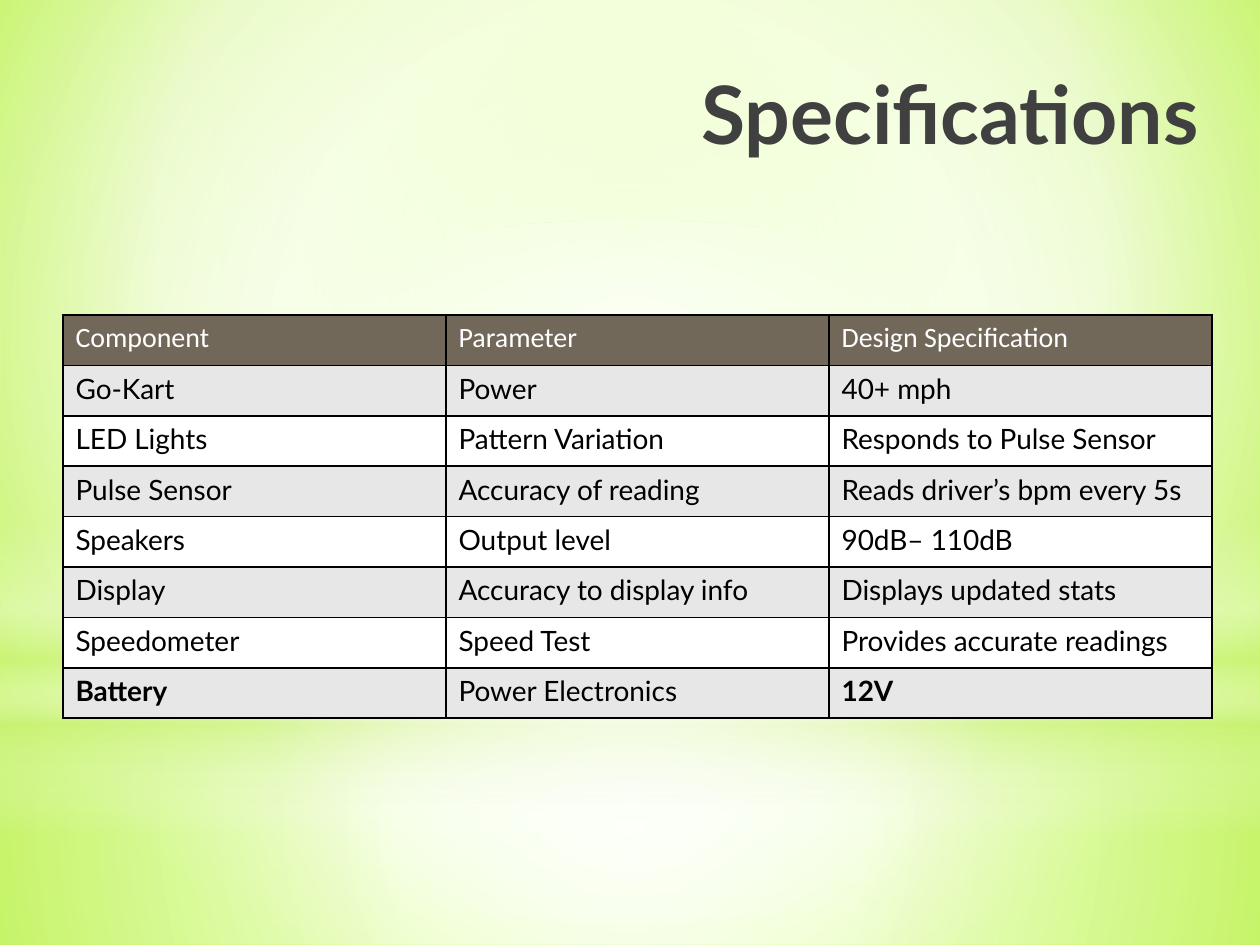
from dataclasses import dataclass

from lxml import etree
from pptx import Presentation
from pptx.dml.color import RGBColor
from pptx.enum.shapes import MSO_SHAPE
from pptx.enum.text import MSO_ANCHOR, PP_ALIGN
from pptx.oxml import parse_xml
from pptx.oxml.ns import nsdecls, qn
from pptx.slide import Slide
from pptx.util import Inches, Pt

RECTANGLE = MSO_SHAPE.RECTANGLE
OVAL = MSO_SHAPE.OVAL
MIDDLE = MSO_ANCHOR.MIDDLE
RIGHT = PP_ALIGN.RIGHT

COLOURS = {
    "white": "FFFFFF", "black": "000000", "title": "404040",
    "header": "71685A", "band": "E7E7E7", "glow": "CAF278",
    "lime": "CAFF60", "pale": "F7FFE7", "bright": "B7FF29",
}


@dataclass(frozen=True)
class Stop:
    position: int
    colour: str
    alpha: int = 100


@dataclass(frozen=True)
class Gradient:
    stops: tuple[Stop, ...]
    focus: tuple[int, int, int, int] | None = (50, 50, 50, 50)


@dataclass(frozen=True)
class Layer:
    kind: MSO_SHAPE
    top: float
    height: float
    gradient: Gradient


BACKGROUND = Gradient(
    (Stop(0, "lime"), Stop(60, "pale"), Stop(100, "bright")), (20, 10, 20, 60)
)
LAYERS = (
    Layer(RECTANGLE, 5.58, 1.92, Gradient(
        (Stop(0, "white", 91), Stop(37, "white", 76), Stop(100, "glow", 79)))),
    Layer(RECTANGLE, 0, 5.58, Gradient(
        (Stop(0, "white", 89), Stop(48, "white", 62), Stop(100, "glow", 79)))),
    Layer(RECTANGLE, 4.12, 2.5, Gradient(
        (Stop(0, "white", 0), Stop(29, "white", 30), Stop(45, "glow", 40),
         Stop(55, "white", 26), Stop(65, "glow", 60), Stop(100, "white", 0)), None)),
    Layer(OVAL, 1.75, 5.58, Gradient((Stop(0, "white"), Stop(56, "white", 0)))),
)

ROWS = (
    ("Component", "Parameter", "Design Specification"),
    ("Go-Kart", "Power", "40+ mph"),
    ("LED Lights", "Pattern Variation", "Responds to Pulse Sensor"),
    ("Pulse Sensor", "Accuracy of reading", "Reads driver’s bpm every 5s"),
    ("Speakers", "Output level", "90dB– 110dB"),
    ("Display", "Accuracy to display info", "Displays updated stats"),
    ("Speedometer", "Speed Test", "Provides accurate readings"),
    ("Battery", "Power Electronics", "12V"),
)
BOLD_TEXTS = {"Battery", "12V"}
COLUMN_WIDTH = 3.04
ROW_HEIGHT = 0.4


def rgb(name: str) -> RGBColor:
    return RGBColor.from_string(COLOURS[name])


def apply_gradient(parent: etree._Element, gradient: Gradient) -> None:
    stops = "".join(
        f'<a:gs pos="{stop.position * 1000}"><a:srgbClr val="{COLOURS[stop.colour]}">'
        f'<a:alpha val="{stop.alpha * 1000}"/></a:srgbClr></a:gs>'
        for stop in gradient.stops
    )
    direction = '<a:lin ang="5400000" scaled="0"/>'
    if gradient.focus:
        sides = " ".join(
            f'{side}="{value * 1000}"' for side, value in zip("ltrb", gradient.focus)
        )
        direction = f'<a:path path="circle"><a:fillToRect {sides}/></a:path>'
    fill = parse_xml(
        f'<a:gradFill {nsdecls("a")} rotWithShape="1"><a:gsLst>{stops}</a:gsLst>'
        f"{direction}</a:gradFill>"
    )
    placeholder_fill = next(parent.iter(qn("a:gradFill")))
    placeholder_fill.getparent().replace(placeholder_fill, fill)


def write_text(paragraph, text: str, colour: str, formats: dict) -> None:
    run = paragraph.add_run()
    run.text = text
    for attribute, value in formats.items():
        setattr(run.font, attribute, value)
    run.font.color.rgb = rgb(colour)


def add_layer(slide: Slide, layer: Layer) -> None:
    shape = slide.shapes.add_shape(
        layer.kind, 0, Inches(layer.top), Inches(10), Inches(layer.height)
    )
    shape.shadow.inherit = False
    shape.line.fill.background()
    shape.fill.gradient()
    apply_gradient(shape.element.spPr, layer.gradient)


def add_title(slide: Slide, text: str) -> None:
    box = slide.shapes.add_textbox(Inches(3.08), Inches(0.42), Inches(6.53), Inches(0.94))
    frame = box.text_frame
    for attribute, value in {"word_wrap": True, "vertical_anchor": MIDDLE}.items():
        setattr(frame, attribute, value)
    paragraph = frame.paragraphs[0]
    paragraph.alignment = RIGHT
    write_text(paragraph, text, "title", {"name": "Lato", "size": Pt(46), "bold": True})


def add_borders(cell) -> None:
    properties = cell._tc.get_or_add_tcPr()
    for index, side in enumerate("LRTB"):
        properties.insert(index, parse_xml(
            f'<a:ln{side} {nsdecls("a")} w="{Pt(1)}"><a:solidFill>'
            f'<a:srgbClr val="{COLOURS["black"]}"/></a:solidFill></a:ln{side}>'
        ))


def add_specifications(slide: Slide, rows: tuple[tuple[str, ...], ...]) -> None:
    columns = len(rows[0])
    table = slide.shapes.add_table(
        len(rows), columns, Inches(0.5), Inches(2.5),
        Inches(COLUMN_WIDTH * columns), Inches(ROW_HEIGHT * len(rows)),
    ).table
    for row_index, texts in enumerate(rows):
        is_header = row_index == 0
        fill = "header" if is_header else ("white", "band")[row_index % 2]
        for column_index, text in enumerate(texts):
            cell = table.cell(row_index, column_index)
            cell.fill.solid()
            cell.fill.fore_color.rgb = rgb(fill)
            add_borders(cell)
            write_text(
                cell.text_frame.paragraphs[0], text, "white" if is_header else "black",
                {"name": "Calibri" if is_header else "Lato", "size": Pt(16),
                 "bold": text in BOLD_TEXTS},
            )


def main() -> None:
    """Build the specifications slide and save it."""
    presentation = Presentation()
    presentation.slide_width = Inches(10)
    presentation.slide_height = Inches(7.5)
    slide = presentation.slides.add_slide(presentation.slide_layouts[6])
    slide.background.fill.gradient()
    apply_gradient(slide.element, BACKGROUND)
    for layer in LAYERS:
        add_layer(slide, layer)
    add_title(slide, "Specifications")
    add_specifications(slide, ROWS)
    presentation.save("out.pptx")


if __name__ == "__main__":
    main()
